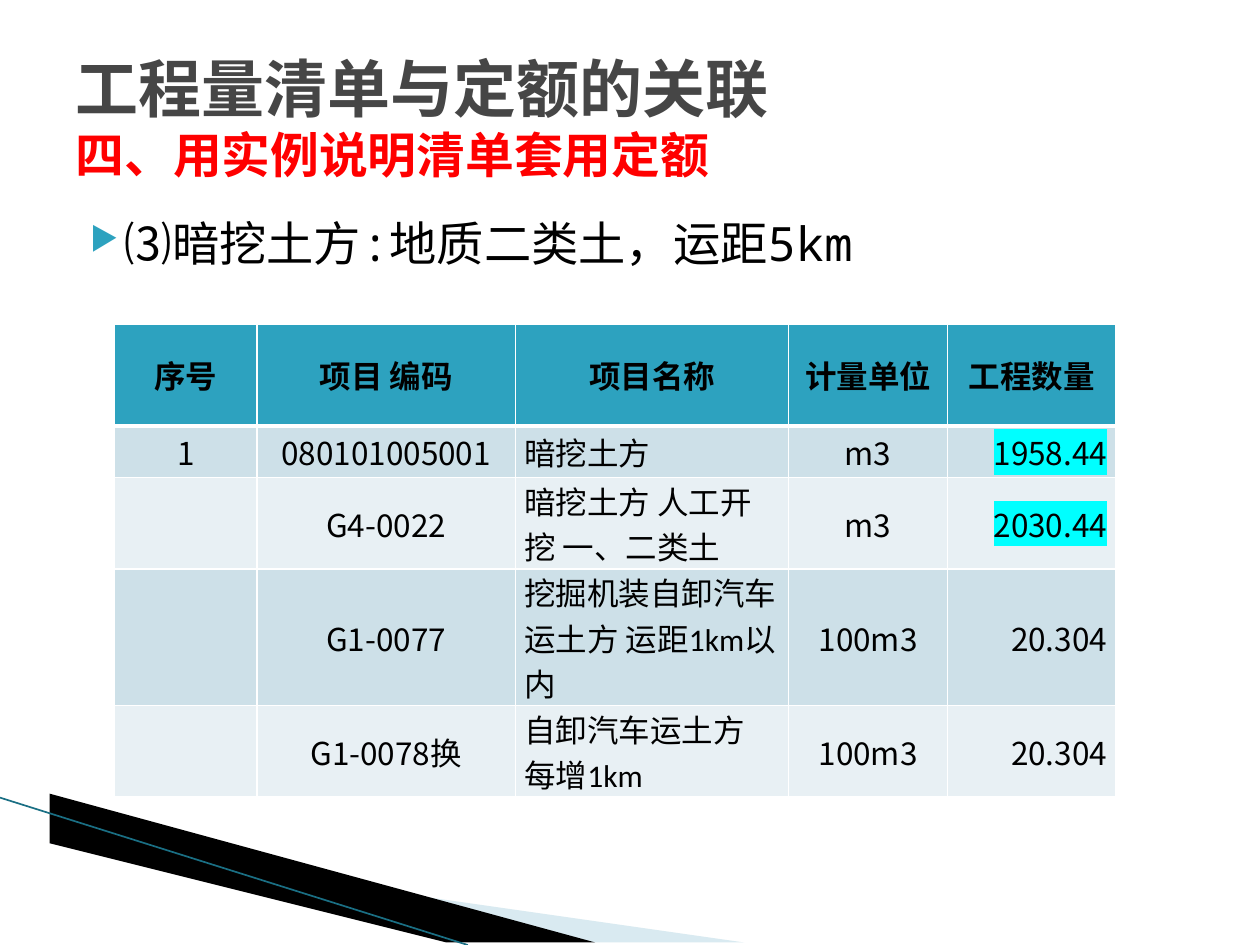
from dataclasses import dataclass, field

from lxml.etree import SubElement
from pptx import Presentation
from pptx.dml.color import RGBColor
from pptx.enum.shapes import MSO_CONNECTOR
from pptx.enum.text import MSO_ANCHOR, MSO_AUTO_SIZE, PP_ALIGN
from pptx.oxml.ns import qn
from pptx.slide import Slide
from pptx.util import Cm, Pt

COLORS = {
    "black": "000000", "white": "FFFFFF", "title": "464646", "red": "FF0000",
    "accent": "2DA2BF", "band_dark": "CDE0E8", "band_light": "E8F0F4",
    "highlight": "00FFFF", "pale_wedge": "A0CBDC", "edge": "1A6F84",
}
MONO, SANS, LATIN = "Noto Sans Mono", "Noto Sans CJK SC", "Calibri"
LEFT, CENTER, RIGHT = PP_ALIGN.LEFT, PP_ALIGN.CENTER, PP_ALIGN.RIGHT

HEADINGS = ["序号", "项目 编码", "项目名称", "计量单位", "工程数量"]
ITEMS = [
    ["1", "080101005001", "暗挖土方", "m3", "1958.44"],
    ["", "G4-0022", "暗挖土方 人工开挖 一、二类土", "m3", "2030.44"],
    ["", "G1-0077", "挖掘机装自卸汽车运土方 运距1km以内", "100m3", "20.304"],
    ["", "G1-0078换", "自卸汽车运土方 每增1km", "100m3", "20.304"],
]
HIGHLIGHTED = {"1958.44", "2030.44"}
COLUMN_WIDTHS = [2.87, 5.21, 5.51, 3.2, 3.4]
COLUMN_ALIGNMENTS = [CENTER, CENTER, LEFT, CENTER, RIGHT]
COLUMN_FONTS = [SANS, SANS, LATIN, SANS, SANS]


def rgb(name):
    return RGBColor.from_string(COLORS[name])


def add_color(parent, name):
    return SubElement(parent, qn("a:srgbClr"), val=COLORS[name])


@dataclass
class SlideBuilder:
    slide: Slide
    frame_format: dict = field(default_factory=lambda: {
        "word_wrap": True, "auto_size": MSO_AUTO_SIZE.NONE})
    cell_format: dict = field(default_factory=lambda: {
        "margin_left": Cm(0.18), "margin_right": Cm(0.18), "margin_top": 0,
        "margin_bottom": 0, "vertical_anchor": MSO_ANCHOR.MIDDLE})

    def apply(self, target, values):
        for name, value in values.items():
            setattr(target, name, value)

    def run(self, paragraph, text, size, font, color, bold=False, highlight=None):
        run = paragraph.add_run()
        run.text = text
        self.apply(run.font, {"size": Pt(size), "bold": bold, "name": font})
        run.font.color.rgb = rgb(color)
        properties = run.font._element
        east_asian = SubElement(properties, qn("a:ea"), typeface=SANS)
        properties.find(qn("a:latin")).addnext(east_asian)
        if highlight:
            mark = SubElement(properties, qn("a:highlight"))
            add_color(mark, highlight)
            properties.find(qn("a:solidFill")).addnext(mark)

    def title(self, heading, subheading):
        title = self.slide.shapes.title
        self.apply(title, {"left": Cm(1.27), "top": Cm(0.76),
                           "width": Cm(22.86), "height": Cm(3.18)})
        self.apply(title.text_frame, self.frame_format)
        title.text_frame.vertical_anchor = MSO_ANCHOR.MIDDLE
        paragraph = title.text_frame.paragraphs[0]
        paragraph.alignment = LEFT
        self.run(paragraph, heading, 36, MONO, "title", True)
        paragraph.add_line_break()
        self.run(paragraph, subheading, 27.9, MONO, "red", True)

    def bullet(self, text):
        box = self.slide.shapes.add_textbox(Cm(1.27), Cm(4.2), Cm(22.86), Cm(12.57))
        self.apply(box.text_frame, self.frame_format)
        paragraph = box.text_frame.paragraphs[0]
        properties = paragraph._p.get_or_add_pPr()
        properties.set("marL", str(Cm(1)))
        properties.set("indent", str(Cm(-0.7)))
        add_color(SubElement(properties, qn("a:buClr")), "accent")
        SubElement(properties, qn("a:buSzPct"), val="68000")
        SubElement(properties, qn("a:buChar"), char="▶")
        self.run(paragraph, text, 27, MONO, "black")

    def wedge(self, points, color, opacity=100):
        outline = self.slide.shapes.build_freeform(*points[0], scale=Cm(1))
        outline.add_line_segments(points[1:], close=True)
        wedge = outline.convert_to_shape()
        wedge.shadow.inherit = False
        wedge.fill.solid()
        wedge.fill.fore_color.rgb = rgb(color)
        wedge.line.fill.background()
        if opacity < 100:
            fill_color = wedge._element.spPr.find(qn("a:solidFill"))[0]
            SubElement(fill_color, qn("a:alpha"), val=str(opacity * 1000))

    def line(self, start, end, color, width):
        ends = [Cm(value) for value in (*start, *end)]
        line = self.slide.shapes.add_connector(MSO_CONNECTOR.STRAIGHT, *ends)
        line.line.color.rgb = rgb(color)
        line.line.width = Pt(width)
        SubElement(line._element.spPr, qn("a:effectLst"))

    def borders(self, cell, widths):
        properties = cell._tc.get_or_add_tcPr()
        for position, (side, width) in enumerate(widths.items()):
            border = SubElement(properties, qn(f"a:ln{side}"), w=str(Pt(width)))
            add_color(SubElement(border, qn("a:solidFill")), "white")
            properties.insert(position, border)

    def cell(self, cell, text, fill, alignment, **style):
        self.apply(cell, self.cell_format)
        cell.fill.solid()
        cell.fill.fore_color.rgb = rgb(fill)
        paragraph = cell.text_frame.paragraphs[0]
        paragraph.alignment = alignment
        if text:
            self.run(paragraph, text, 18, color="black", **style)

    def quantity_table(self):
        table = self.slide.shapes.add_table(
            len(ITEMS) + 1, len(HEADINGS), Cm(2.31), Cm(6.53),
            Cm(sum(COLUMN_WIDTHS)), Cm(2.06 + 1.04 * len(ITEMS))).table
        for column, width in zip(table.columns, COLUMN_WIDTHS):
            column.width = Cm(width)
        for index, row in enumerate(table.rows):
            row.height = Cm(1.04 if index else 2.06)
            for cell in row.cells:
                self.borders(cell, {"L": 1, "R": 1, "T": 3 if index == 1 else 1,
                                    "B": 1 if index else 3})
        for column, heading in enumerate(HEADINGS):
            self.cell(table.cell(0, column), heading, "accent", CENTER,
                      font=LATIN, bold=True)
        for index, item in enumerate(ITEMS):
            band = "band_light" if index % 2 else "band_dark"
            for column, text in enumerate(item):
                self.cell(table.cell(index + 1, column), text, band,
                          COLUMN_ALIGNMENTS[column], font=COLUMN_FONTS[column],
                          highlight="highlight" if text in HIGHLIGHTED else None)


def main():
    presentation = Presentation()
    presentation.slide_width, presentation.slide_height = Cm(25.4), Cm(19.05)
    builder = SlideBuilder(
        presentation.slides.add_slide(presentation.slide_layouts[5]))
    builder.wedge([(1.4, 16.53), (15.1, 19.05), (11.58, 19.05), (1.4, 16.51)],
                  "pale_wedge", 40)
    builder.wedge([(1.35, 16.48), (11.6, 19.05), (9.45, 19.05), (1.37, 16.51)],
                  "black")
    builder.line((0, 16.08), (9.43, 19.05), "edge", 0.95)
    builder.bullet("⑶暗挖土方:地质二类土，运距5km")
    builder.title("工程量清单与定额的关联", "四、用实例说明清单套用定额")
    builder.quantity_table()
    presentation.save("out.pptx")


if __name__ == "__main__":
    main()
